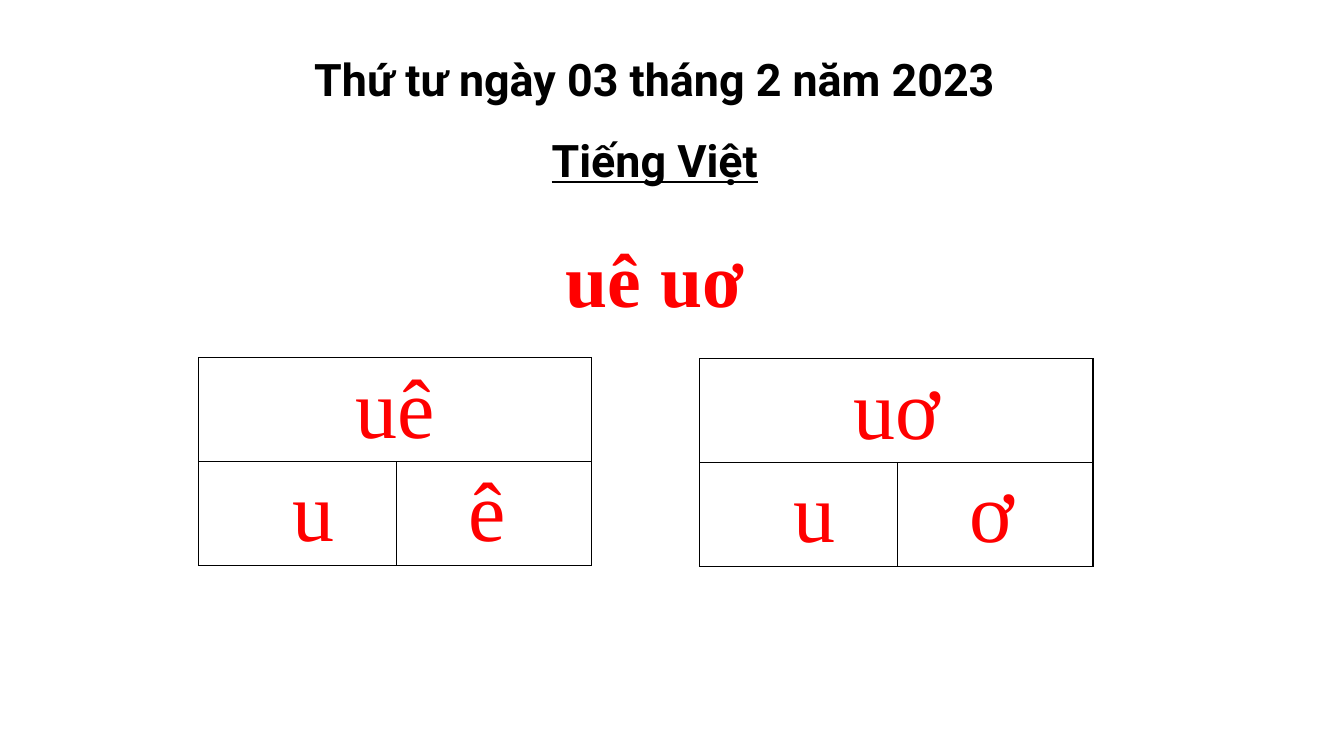
from dataclasses import dataclass

from lxml.etree import SubElement
from pptx import Presentation
from pptx.dml.color import RGBColor
from pptx.enum.text import MSO_ANCHOR, MSO_AUTO_SIZE, PP_ALIGN
from pptx.oxml.ns import qn
from pptx.util import Inches, Pt

COLORS = {"ink": "000000", "letter": "FF0000"}
LETTER_FONT = "Times New Roman"
COL_WIDTHS = (1.96, 1.94)
ROW_HEIGHT = 1.03
VOWEL_INDENTS = (0.93, 0.72)


@dataclass
class Style:
    size: int
    font: str
    color: str
    bold: bool = False
    underline: bool = False


@dataclass
class Line:
    text: str
    style: Style


@dataclass
class RhymeTable:
    left: float
    top: float
    rhyme: str
    vowels: tuple[str, str]


LETTER = Style(60, LETTER_FONT, "letter")
HEADING = [
    Line("Thứ tư ngày 03 tháng 2 năm 2023", Style(32, "Roboto", "ink", True)),
    Line("Tiếng Việt", Style(32, "Roboto", "ink", True, True)),
    Line("uê uơ", Style(54, LETTER_FONT, "letter", True)),
]
TABLES = [
    RhymeTable(6.94, 3.56, "uơ", ("u", "ơ")),
    RhymeTable(1.97, 3.55, "uê", ("u", "ê")),
]


def add_run(p, text: str, style: Style) -> None:
    r = p.add_run()
    r.text = text
    r.font.size = Pt(style.size)
    r.font.name = style.font
    r.font.bold = style.bold
    r.font.underline = style.underline
    r.font.color.rgb = RGBColor.from_string(COLORS[style.color])


def format_cell(cell) -> None:
    tc_pr = cell._tc.get_or_add_tcPr()
    for side in ("lnL", "lnR", "lnT", "lnB"):
        ln = SubElement(tc_pr, qn(f"a:{side}"), w=str(Pt(1)))
        fill = SubElement(ln, qn("a:solidFill"))
        SubElement(fill, qn("a:srgbClr"), val=COLORS["ink"])
    cell.fill.background()
    cell.margin_top = cell.margin_bottom = Inches(0.03)
    cell.vertical_anchor = MSO_ANCHOR.MIDDLE


def add_rhyme_table(s, rhyme_table: RhymeTable) -> None:
    table = s.shapes.add_table(
        2, 2, Inches(rhyme_table.left), Inches(rhyme_table.top),
        Inches(sum(COL_WIDTHS)), Inches(2 * ROW_HEIGHT),
    ).table
    table.first_row = table.horz_banding = False
    for column, width in zip(table.columns, COL_WIDTHS):
        column.width = Inches(width)
    for row in table.rows:
        row.height = Inches(ROW_HEIGHT)
    for cell in table.iter_cells():
        format_cell(cell)

    top = table.cell(0, 0)
    top.merge(table.cell(0, 1))
    p = top.text_frame.paragraphs[0]
    p.alignment = PP_ALIGN.CENTER
    add_run(p, rhyme_table.rhyme, LETTER)
    for i, (vowel, indent) in enumerate(zip(rhyme_table.vowels, VOWEL_INDENTS)):
        cell = table.cell(1, i)
        cell.margin_left = Inches(indent)
        add_run(cell.text_frame.paragraphs[0], vowel, LETTER)


def add_heading(s, lines: list[Line]) -> None:
    sp = s.shapes.add_textbox(Inches(1.59), Inches(0.2), Inches(9.81), Inches(3.08))
    tf = sp.text_frame
    tf.word_wrap = True
    tf.auto_size = MSO_AUTO_SIZE.SHAPE_TO_FIT_TEXT
    for i, line in enumerate(lines):
        p = tf.add_paragraph() if i else tf.paragraphs[0]
        p.alignment = PP_ALIGN.CENTER
        p.line_spacing = 1.5
        add_run(p, line.text, line.style)


def main() -> None:
    prs = Presentation()
    prs.slide_width, prs.slide_height = Inches(13.33), Inches(7.5)
    s = prs.slides.add_slide(prs.slide_layouts[6])
    for rhyme_table in TABLES:
        add_rhyme_table(s, rhyme_table)
    add_heading(s, HEADING)
    prs.save("out.pptx")


if __name__ == "__main__":
    main()
